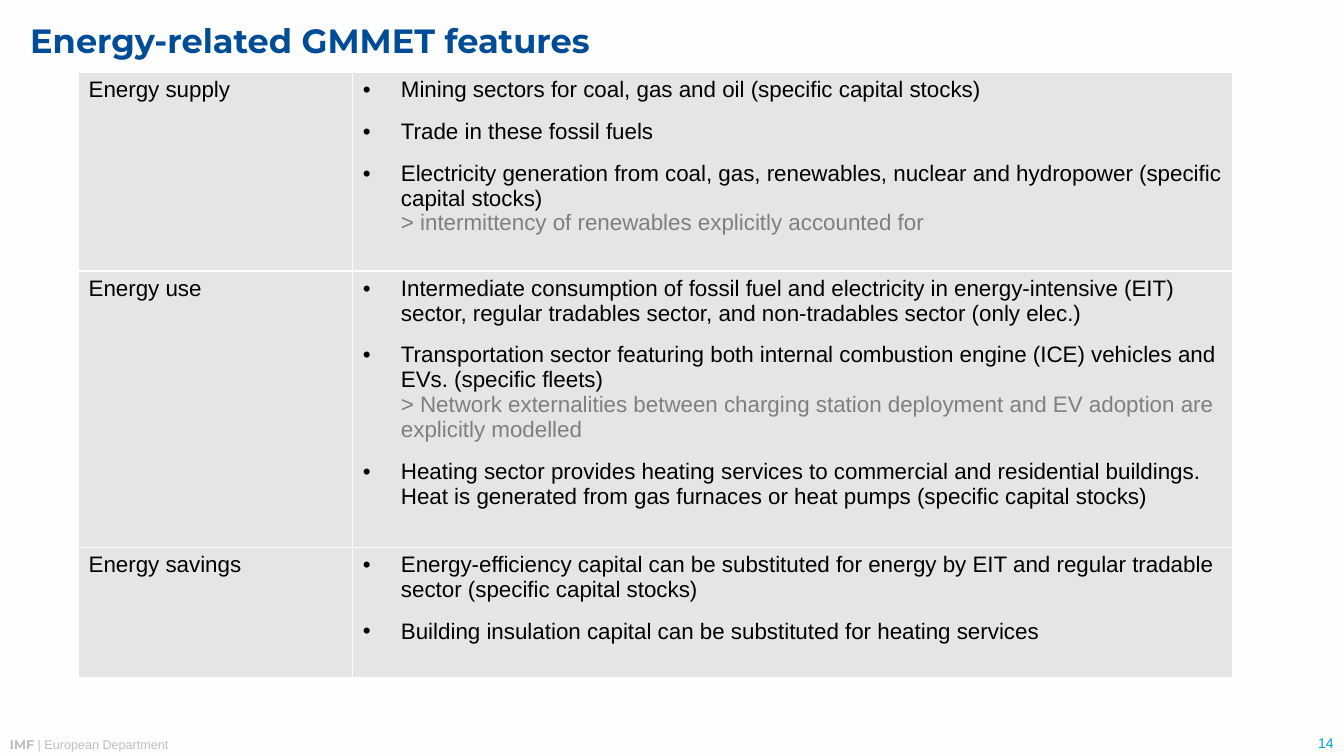
from lxml import etree
from pptx import Presentation
from pptx import util as u
from pptx.dml.color import RGBColor
from pptx.enum import text as t
from pptx.oxml.ns import qn

COLORS = {"title": "004C97", "ink": "000000", "aside": "7F7F7F", "cell": "E5E5E5",
          "paper": "FEFEFE", "footer": "BEBEBE", "number": "009CDE"}

TITLE = "Energy-related GMMET features"
FEATURES = [
    ("Energy supply", 5.0, [
        ("Mining sectors for coal, gas and oil (specific capital stocks)", None),
        ("Trade in these fossil fuels", None),
        ("Electricity generation from coal, gas, renewables, nuclear and hydropower "
         "(specific capital stocks)",
         "> intermittency of renewables explicitly accounted for"),
    ]),
    ("Energy use", 6.96, [
        ("Intermediate consumption of fossil fuel and electricity in energy-intensive (EIT) "
         "sector, regular tradables sector, and non-tradables sector (only elec.)", None),
        ("Transportation sector featuring both internal combustion engine (ICE) vehicles "
         "and EVs. (specific fleets)",
         "> Network externalities between charging station deployment and EV adoption "
         "are explicitly modelled"),
        ("Heating sector provides heating services to commercial and residential buildings. "
         "Heat is generated from gas furnaces or heat pumps (specific capital stocks)", None),
    ]),
    ("Energy savings", 3.28, [
        ("Energy-efficiency capital can be substituted for energy by EIT and regular "
         "tradable sector (specific capital stocks)", None),
        ("Building insulation capital can be substituted for heating services", None),
    ]),
]
COLUMN_WIDTHS = (6.91, 22.17)
TABLE_LEFT, TABLE_TOP = 1.98, 1.83
BULLET_INDENT = 0.96


def write(paragraph, content, size=16, color="ink", font="Arial", bold=False):
    run = paragraph.add_run()
    run.text = content
    run.font.size = u.Pt(size)
    run.font.name = font
    run.font.bold = bold
    run.font.color.rgb = RGBColor.from_string(COLORS[color])


def add_bullet(paragraph):
    props = paragraph._p.get_or_add_pPr()
    indent = u.Cm(BULLET_INDENT)
    props.set("marL", str(indent))
    props.set("indent", str(-indent))
    etree.SubElement(props, qn("a:buFont")).set("typeface", "Arial")
    etree.SubElement(props, qn("a:buChar")).set("char", "•")


def style_cell(cell):
    props = cell._tc.get_or_add_tcPr()
    for side in ("lnL", "lnR", "lnT", "lnB"):
        border = etree.SubElement(props, qn("a:" + side), w=str(u.Pt(1)))
        fill = etree.SubElement(border, qn("a:solidFill"))
        etree.SubElement(fill, qn("a:srgbClr"), val=COLORS["paper"])
    cell.fill.solid()
    cell.fill.fore_color.rgb = RGBColor.from_string(COLORS["cell"])


def add_title(slide):
    title = slide.shapes.title
    title.left, title.top, title.width, title.height = map(u.Cm, (0.76, -0.28, 34.09, 2.72))
    frame = title.text_frame
    frame.margin_left = frame.margin_right = frame.margin_top = frame.margin_bottom = 0
    frame.vertical_anchor = t.MSO_ANCHOR.MIDDLE
    frame.auto_size = t.MSO_AUTO_SIZE.NONE
    heading = frame.paragraphs[0]
    heading.alignment = t.PP_ALIGN.LEFT
    heading.line_spacing = 0.9
    write(heading, TITLE, size=24, color="title", font="Montserrat", bold=True)


def add_features(slide):
    heights = [height for _, height, _ in FEATURES]
    features = slide.shapes.add_table(
        len(FEATURES), len(COLUMN_WIDTHS), u.Cm(TABLE_LEFT), u.Cm(TABLE_TOP),
        u.Cm(sum(COLUMN_WIDTHS)), u.Cm(sum(heights))).table
    features.first_row = features.horz_banding = False
    for column, width in zip(features.columns, COLUMN_WIDTHS):
        column.width = u.Cm(width)
    for row, (topic, height, points) in zip(features.rows, FEATURES):
        row.height = u.Cm(height)
        topic_cell, points_cell = row.cells
        style_cell(topic_cell)
        style_cell(points_cell)
        write(topic_cell.text_frame.paragraphs[0], topic)
        frame = points_cell.text_frame
        for index, (point, aside) in enumerate(points):
            paragraph = frame.add_paragraph() if index else frame.paragraphs[0]
            add_bullet(paragraph)
            if index:
                paragraph.space_before = u.Pt(12)
            write(paragraph, point)
            if aside:
                paragraph.add_line_break()
                write(paragraph, aside, color="aside")


def add_box(slide, *place):
    frame = slide.shapes.add_textbox(*map(u.Cm, place)).text_frame
    frame.word_wrap = True
    return frame


def add_footer(slide):
    department = add_box(slide, 0, 18.44, 25.4, 0.64).paragraphs[0]
    write(department, "IMF ", size=9, color="footer", font="Montserrat", bold=True)
    write(department, "| European Department", size=9, color="footer")
    number = add_box(slide, 30.51, 18.39, 3.35, 0.68)
    number.vertical_anchor = t.MSO_ANCHOR.BOTTOM
    number.paragraphs[0].alignment = t.PP_ALIGN.RIGHT
    write(number.paragraphs[0], "14", size=10, color="number")


def main():
    deck = Presentation()
    deck.slide_width, deck.slide_height = u.Cm(33.87), u.Cm(19.05)
    slide = deck.slides.add_slide(deck.slide_layouts[5])
    slide.background.fill.solid()
    slide.background.fill.fore_color.rgb = RGBColor.from_string(COLORS["paper"])
    add_title(slide)
    add_features(slide)
    add_footer(slide)
    deck.save("out.pptx")


if __name__ == "__main__":
    main()
